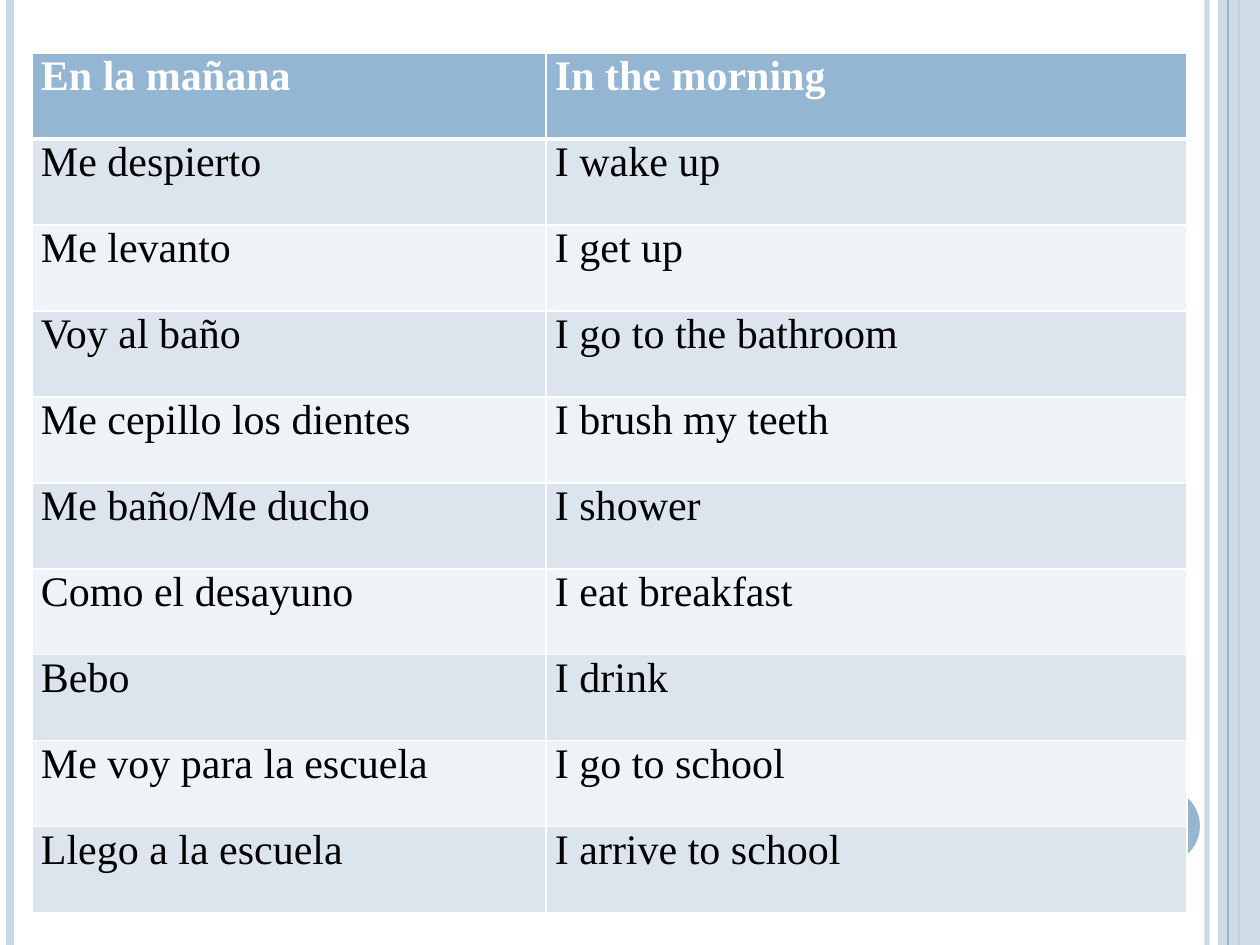
from lxml.etree import SubElement
from pptx import Presentation
from pptx.dml.color import RGBColor
from pptx.enum.shapes import MSO_CONNECTOR as Link, MSO_SHAPE as Shape
from pptx.oxml.ns import qn
from pptx.util import Pt

WHITE = RGBColor(0xFF, 0xFF, 0xFF)
BLACK = RGBColor(0x00, 0x00, 0x00)
BLUE = RGBColor(0x94, 0xB6, 0xD2)
PALE = RGBColor(0xC8, 0xD7, 0xE5)
BANDS = (RGBColor(0xEE, 0xF3, 0xF7), RGBColor(0xDC, 0xE5, 0xEE))
FONT = "Times New Roman"

ROWS = [
    ("En la mañana", "In the morning"),
    ("Me despierto", "I wake up"),
    ("Me levanto", "I get up"),
    ("Voy al baño", "I go to the bathroom"),
    ("Me cepillo los dientes", "I brush my teeth"),
    ("Me baño/Me ducho", "I shower"),
    ("Como el desayuno", "I eat breakfast"),
    ("Bebo", "I drink"),
    ("Me voy para la escuela", "I go to school"),
    ("Llego a la escuela", "I arrive to school"),
]
COLS = (514, 641)
ROW_H = 86
LEFT, TOP = 32, 53
WIDE, HIGH = 1260, 945


def px(n):
    return round(n * 914400 / 126)


def fade(fill, part):
    """Set the opacity of a solid fill, in percent."""
    color = fill._xPr.find(qn("a:solidFill"))[0]
    SubElement(color, qn("a:alpha"), val=str(part * 1000))


def rule(shapes, x, color, width, part=100):
    """Draw a line down the full height of the slide."""
    line = shapes.add_connector(Link.STRAIGHT, px(x), 0, px(x), px(HIGH))
    line.line.color.rgb = color
    line.line.width = Pt(width)
    if part < 100:
        fade(line.line.fill, part)
    SubElement(line._element.spPr, qn("a:effectLst"))


def block(shapes, kind, x, y, w, h, color):
    shape = shapes.add_shape(kind, px(x), px(y), px(w), px(h))
    shape.shadow.inherit = False
    shape.fill.solid()
    shape.fill.fore_color.rgb = color
    shape.line.fill.background()
    return shape


def edge(cell, side, width):
    line = SubElement(cell._tc.get_or_add_tcPr(), qn("a:ln" + side), w=str(Pt(width)))
    SubElement(SubElement(line, qn("a:solidFill")), qn("a:srgbClr"), val=str(WHITE))


def fill_cell(cell, text, row):
    head = row == 0
    cell.margin_left = cell.margin_right = px(9)
    cell.margin_top = cell.margin_bottom = 0
    for side in "LRTB":
        thick = (head and side == "B") or (row == 1 and side == "T")
        edge(cell, side, 3 if thick else 1)
    cell.fill.solid()
    cell.fill.fore_color.rgb = BLUE if head else BANDS[row % 2]
    run = cell.text_frame.paragraphs[0].add_run()
    run.text = text
    run.font.name = FONT
    run.font.size = Pt(24)
    run.font.bold = head
    run.font.color.rgb = WHITE if head else BLACK


def add_words(shapes):
    table = shapes.add_table(len(ROWS), len(COLS), px(LEFT), px(TOP),
                             px(sum(COLS)), px(ROW_H * len(ROWS))).table
    table.first_row = table.horz_banding = False
    for col, width in zip(table.columns, COLS):
        col.width = px(width)
    for r, words in enumerate(ROWS):
        table.rows[r].height = px(ROW_H)
        for c, text in enumerate(words):
            fill_cell(table.cell(r, c), text, r)


def main():
    deck = Presentation()
    deck.slide_width, deck.slide_height = px(WIDE), px(HIGH)
    shapes = deck.slides.add_slide(deck.slide_layouts[6]).shapes
    rule(shapes, 1207, PALE, 3, 93)
    rule(shapes, 10, PALE, 4.5)
    rule(shapes, 1239, BLUE, 1.5)
    band = block(shapes, Shape.RECTANGLE, 1218, 0, 42, HIGH, PALE)
    fade(band.fill, 87)
    rule(shapes, 1228, BLUE, 0.75)
    block(shapes, Shape.OVAL, 1124, 788, 76, 76, BLUE)
    add_words(shapes)
    deck.save("out.pptx")


if __name__ == "__main__":
    main()
